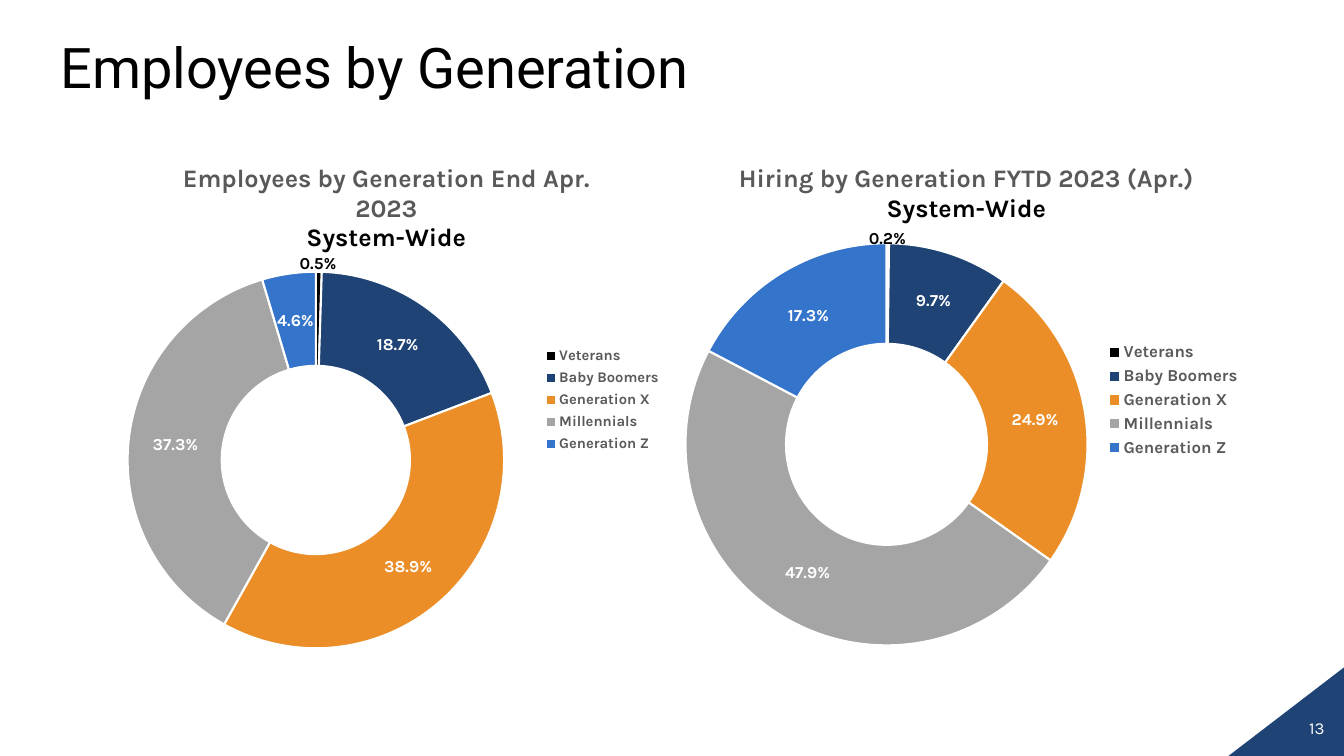
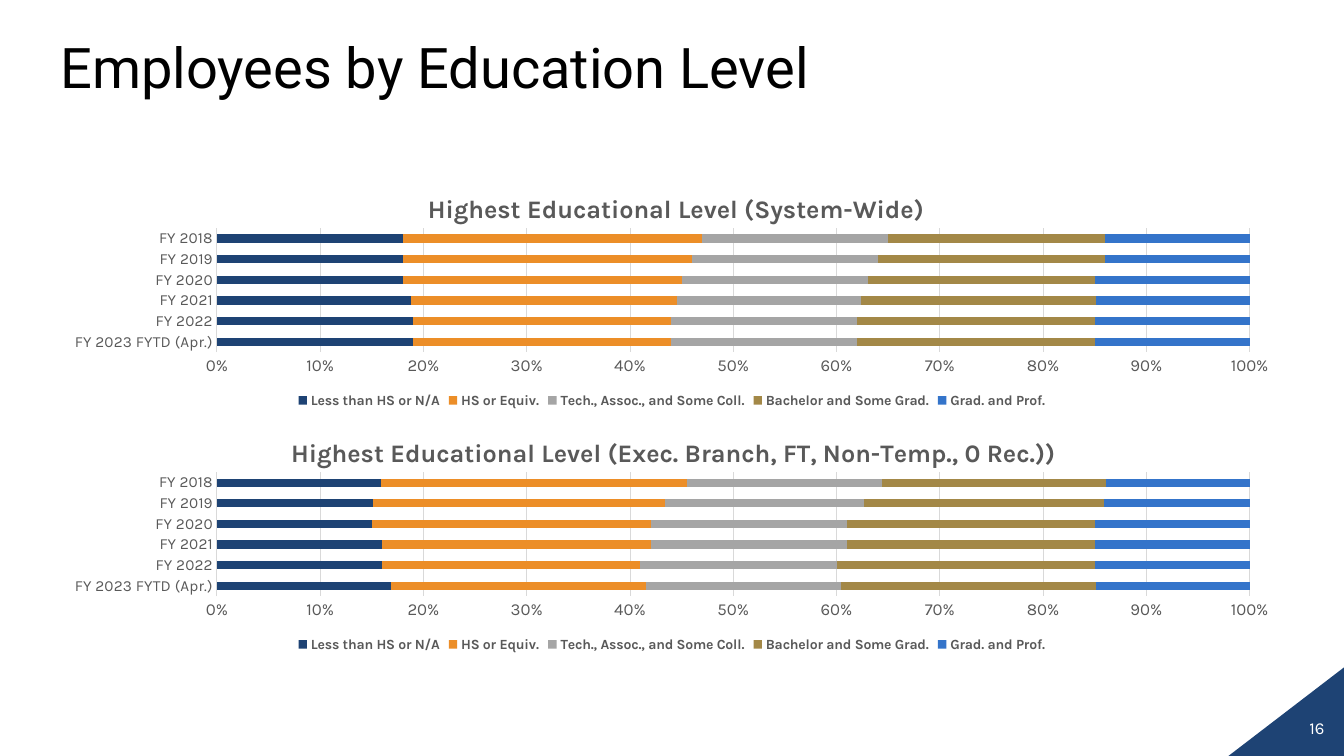
from lxml.etree import SubElement
from pptx import Presentation
from pptx.chart.data import CategoryChartData
from pptx.dml.color import RGBColor
from pptx.enum.chart import XL_CHART_TYPE as ChartType
from pptx.enum.chart import XL_LEGEND_POSITION as LegendPosition
from pptx.enum.chart import XL_TICK_MARK as TickMark
from pptx.enum.shapes import MSO_SHAPE as Preset
from pptx.enum.text import MSO_ANCHOR as Anchor
from pptx.enum.text import PP_ALIGN as Align
from pptx.oxml import parse_xml
from pptx.oxml.ns import nsdecls, qn
from pptx.util import Cm, Pt

HEADING_FONT, BODY_FONT = "Roboto", "Karla"
BLACK, WHITE, TEXT_GREY, RULE_GREY = "000000", "FFFFFF", "595959", "D9D9D9"
NAVY, ORANGE, SILVER, OLIVE, BLUE = "1E4374", "EC8E28", "A5A5A5", "A38847", "3474CA"

GENERATIONS = {
    "Veterans": BLACK,
    "Baby Boomers": NAVY,
    "Generation X": ORANGE,
    "Millennials": SILVER,
    "Generation Z": BLUE,
}
# Title and ring positions are fractions of the chart's own box.
GENERATION_CHARTS = [
    {
        "title": ["Employees by Generation End Apr. 2023", "System-Wide"],
        "shares": [0.5, 18.7, 38.9, 37.3, 4.6],
        "title_at": (0.15, 0.04),
        "ring": (0.06, 0.25, 0.65, 0.73),
        "legend_size": 10.5,
    },
    {
        "title": ["Hiring by Generation FYTD 2023 (Apr.)", "System-Wide"],
        "shares": [0.2, 9.7, 24.9, 47.9, 17.3],
        "title_at": (0.11, 0.04),
        "ring": (0.02, 0.2, 0.7, 0.77),
        "legend_size": 12,
    },
]

EDUCATION_LEVELS = {
    "Less than HS or N/A": NAVY,
    "HS or Equiv.": ORANGE,
    "Tech., Assoc., and Some Coll.": SILVER,
    "Bachelor and Some Grad.": OLIVE,
    "Grad. and Prof.": BLUE,
}
YEARS = ["FY 2023 FYTD (Apr.)", "FY 2022", "FY 2021", "FY 2020", "FY 2019", "FY 2018"]
EDUCATION_CHARTS = [
    {
        "title": ["Highest Educational Level (System-Wide)"],
        "title_at": (0.3, 0.08),
        "shares": [
            [19, 19, 19, 18, 18, 18],
            [25, 25, 26, 27, 28, 29],
            [18, 18, 18, 18, 18, 18],
            [23, 23, 23, 22, 22, 21],
            [15, 15, 15, 15, 14, 14],
        ],
    },
    {
        "title": ["Highest Educational Level (Exec. Branch, FT, Non-Temp., 0 Rec.))"],
        "title_at": (0.19, 0.08),
        "shares": [
            [17, 16, 16, 15, 15, 16],
            [25, 25, 26, 27, 28, 30],
            [19, 19, 19, 19, 19, 19],
            [25, 25, 24, 24, 23, 22],
            [15, 15, 15, 15, 14, 14],
        ],
    },
]


def rgb(color):
    return RGBColor.from_string(color)


def style_font(font, size, color, bold=False, name=BODY_FONT):
    font.name, font.size, font.bold = name, Pt(size), bold
    font.color.rgb = rgb(color)


def fill_solid(fill, color):
    fill.solid()
    fill.fore_color.rgb = rgb(color)


def set_layout(parent, index, **settings):
    """Give a chart part a manual layout, at the given child index if it has none."""
    layout = parent.find(qn("c:layout"))
    if layout is None:
        layout = parse_xml(f"<c:layout {nsdecls('c')}/>")
        parent.insert(index, layout)
    manual = SubElement(layout, qn("c:manualLayout"))
    for key, value in settings.items():
        SubElement(manual, qn(f"c:{key}")).set("val", str(value))


def prepare_layout(deck):
    """Place the title and the corner triangle on the layout that both slides use."""
    layout = deck.slide_layouts.get_by_name("Title Only")
    title = layout.placeholders[0]
    title.left, title.top, title.width, title.height = Cm(1.27), Cm(0.03), Cm(31.32), Cm(3.48)
    return layout


def add_corner(slide, layout):
    """Draw the corner triangle and move it from the slide to the layout."""
    corner = slide.shapes.add_shape(
        Preset.RIGHT_TRIANGLE, Cm(30.96), Cm(16.82), Cm(2.91), Cm(2.23))
    corner.shadow.inherit = False
    fill_solid(corner.fill, NAVY)
    corner.line.fill.background()
    corner.element.spPr.xfrm.set("flipH", "1")
    corner.element.nvSpPr.cNvPr.set("id", "20")
    layout.shapes.element.append(corner.element)


def add_slide(deck, layout, heading, number):
    slide = deck.slides.add_slide(layout)
    frame = slide.shapes.title.text_frame
    frame.text = heading
    frame.vertical_anchor = Anchor.MIDDLE
    line = frame.paragraphs[0]
    line.alignment, line.line_spacing = Align.LEFT, 0.9
    style_font(line.font, 40, BLACK, name=HEADING_FONT)

    frame = slide.shapes.add_textbox(Cm(30.71), Cm(17.96), Cm(2.92), Cm(1.09)).text_frame
    frame.word_wrap = True
    frame.text = str(number)
    frame.paragraphs[0].alignment = Align.RIGHT
    style_font(frame.paragraphs[0].font, 12, WHITE)
    return slide


def add_chart(slide, kind, box, categories, series, content, plot_box, legend):
    """Add a chart with its title, plot area and legend; legend is (position, size)."""
    chart_data = CategoryChartData()
    chart_data.categories = categories
    for name, values in series:
        chart_data.add_series(name, values)
    chart = slide.shapes.add_chart(kind, *map(Cm, box), chart_data).chart
    style_font(chart.font, 10, BLACK)

    chart.has_title = True
    frame = chart.chart_title.text_frame
    frame.text = "\n".join(content["title"])
    for line, color in zip(frame.paragraphs, (TEXT_GREY, BLACK)):
        style_font(line.font, 18, color, bold=True)
    x, y = content["title_at"]
    set_layout(chart.chart_title.element, 1, xMode="edge", yMode="edge", x=x, y=y)

    x, y, w, h = plot_box
    set_layout(chart.element.chart.plotArea, 0, layoutTarget="inner",
               xMode="edge", yMode="edge", x=x, y=y, w=w, h=h)

    chart.has_legend = True
    chart.legend.position, legend_size = legend
    chart.legend.include_in_layout = False
    style_font(chart.legend.font, legend_size, TEXT_GREY, bold=True)
    return chart


def add_generation_chart(slide, box, content):
    chart = add_chart(
        slide, ChartType.DOUGHNUT, box, list(GENERATIONS),
        [("Series 1", content["shares"])], content, content["ring"],
        (LegendPosition.RIGHT, content["legend_size"]))
    plot = chart.plots[0]
    plot.vary_by_categories = True
    for hole in chart.element.iter(qn("c:holeSize")):
        hole.set("val", "75")

    ring = plot.series[0]
    for index, color in enumerate(GENERATIONS.values()):
        segment = ring.points[index].format
        fill_solid(segment.fill, color)
        segment.line.color.rgb = rgb(WHITE)
        segment.line.width = Pt(1.5)

    labels = ring.data_labels
    labels.show_value, labels.show_percentage = False, True
    labels.number_format, labels.number_format_is_linked = "0.0%", False
    style_font(labels.font, 12, WHITE, bold=True)
    lift_veterans_label(ring)


def lift_veterans_label(ring):
    """Set the label of the thinnest segment in black above the ring."""
    style_font(ring.points[0].data_label.font, 12, BLACK, bold=True)
    label = ring.data_labels._element.find(qn("c:dLbl"))
    label.find(qn("c:showVal")).set("val", "0")
    label.find(qn("c:showPercent")).set("val", "1")
    set_layout(label, 1, x=0, y=-0.105)
    label.insert(2, parse_xml(
        f'<c:numFmt {nsdecls("c")} formatCode="0.0%" sourceLinked="0"/>'))


def add_education_chart(slide, box, content):
    chart = add_chart(
        slide, ChartType.BAR_STACKED_100, box, YEARS,
        zip(EDUCATION_LEVELS, content["shares"]), content,
        (0.134, 0.246, 0.831, 0.508), (LegendPosition.BOTTOM, 10))
    plot = chart.plots[0]
    plot.vary_by_categories = False
    plot.gap_width, plot.overlap = 150, 100
    for level, color in zip(plot.series, EDUCATION_LEVELS.values()):
        fill_solid(level.format.fill, color)

    years, percent = chart.category_axis, chart.value_axis
    for axis, size in ((years, 11), (percent, 12)):
        axis.major_tick_mark = axis.minor_tick_mark = TickMark.NONE
        style_font(axis.tick_labels.font, size, TEXT_GREY)
    percent.minimum_scale, percent.maximum_scale, percent.major_unit = 0, 1, 0.1
    percent.tick_labels.number_format = "0%"
    percent.tick_labels.number_format_is_linked = False
    percent.format.line.fill.background()
    percent.has_major_gridlines = True
    for rule in (years.format.line, percent.major_gridlines.format.line):
        rule.color.rgb = rgb(RULE_GREY)
        rule.width = Pt(0.75)


def main():
    deck = Presentation()
    deck.slide_width, deck.slide_height = Cm(33.87), Cm(19.05)
    layout = prepare_layout(deck)

    generation = add_slide(deck, layout, "Employees by Generation", 13)
    add_corner(generation, layout)
    width, height = 14.6, 13.16
    for column, content in enumerate(GENERATION_CHARTS):
        add_generation_chart(generation, (2.34 + column * width, 3.5, width, height), content)

    education = add_slide(deck, layout, "Employees by Education Level", 16)
    width, height = 31.32, 6.15
    for row, content in enumerate(EDUCATION_CHARTS):
        add_education_chart(education, (1.27, 4.24 + row * height, width, height), content)

    deck.save("out.pptx")


if __name__ == "__main__":
    main()
